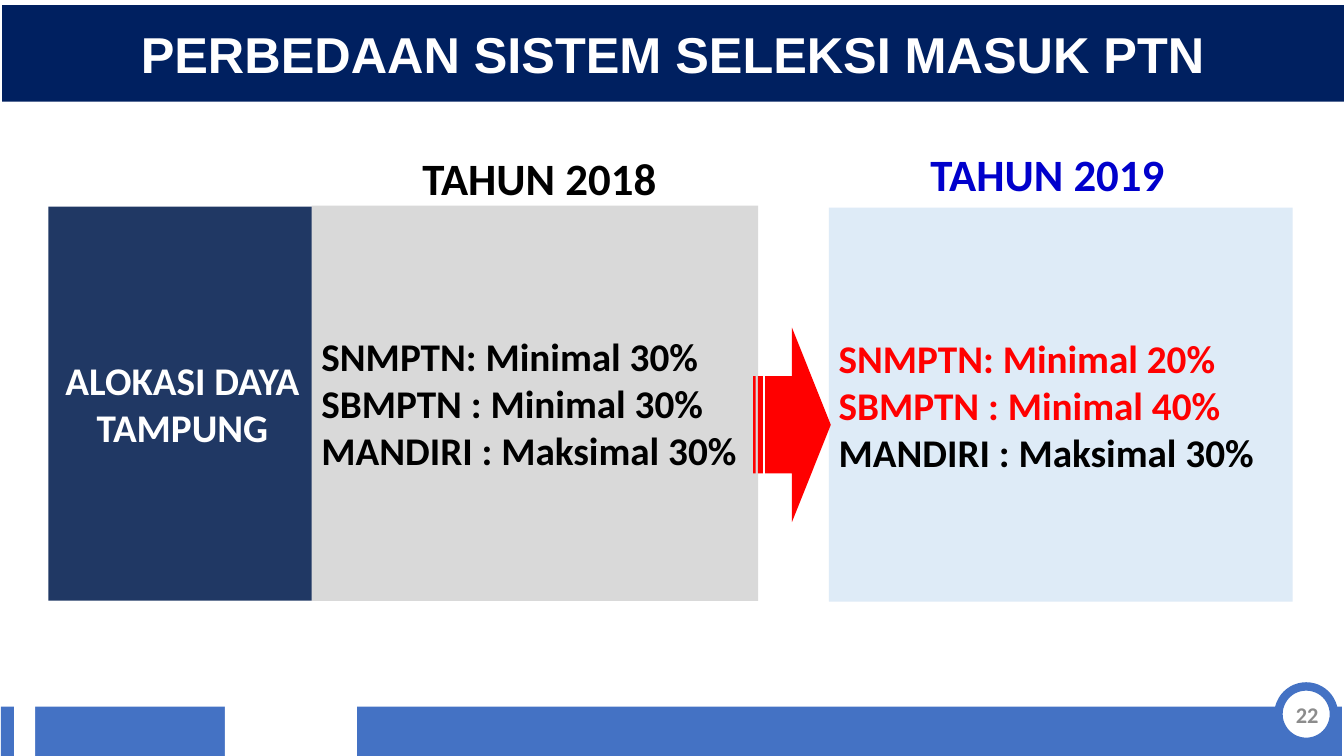
"""Build the slide comparing the 2018 and 2019 admission quotas."""
from pptx import Presentation
from pptx.dml.color import RGBColor
from pptx.enum.shapes import MSO_SHAPE
from pptx.enum.text import MSO_ANCHOR, PP_ALIGN
from pptx.util import Inches, Pt

WHITE = RGBColor(255, 255, 255)
BLACK = RGBColor(0, 0, 0)
RED = RGBColor(255, 0, 0)
BLUE = RGBColor(0x44, 0x72, 0xC4)
NAVY = RGBColor(0, 0x20, 0x60)
SLATE = RGBColor(0x20, 0x38, 0x64)
SILVER = RGBColor(0xD9, 0xD9, 0xD9)
PALE = RGBColor(0xDE, 0xEB, 0xF7)
ROYAL = RGBColor(0, 0, 0xCC)
GRAY = RGBColor(0x8C, 0x8C, 0x8C)

CELL = Inches(0.1)
COLS, ROWS = 133.3, 75
LEFT, RIGHT = PP_ALIGN.LEFT, 133.1
MID = PP_ALIGN.CENTER
RECT = MSO_SHAPE.RECTANGLE

FOOTER = [
    (RECT, (0.1, 70.1, RIGHT - 0.1, ROWS - 70.1), BLUE),
    (RECT, (1.4, 68.1, 2.1, ROWS - 68.1), WHITE),
    (RECT, (22.3, 69.1, 13.1, ROWS - 69.1), WHITE),
]
BADGE = (126.8, 68.1, 5.5, 5.5)
PAGE = ("22", (126.4, 68.4, 6.5, 4.9), 16, GRAY)
PANELS = [
    ((4.8, 20.5, 26.6, 39.1), SLATE, MID, [("ALOKASI DAYA TAMPUNG", WHITE)]),
    ((30.9, 20.4, 44.3, 39.2), SILVER, LEFT, [
        ("SNMPTN: Minimal 30%", BLACK),
        ("SBMPTN : Minimal 30%", BLACK),
        ("MANDIRI : Maksimal 30%", BLACK),
    ]),
    ((82.2, 20.6, 46, 39.1), PALE, LEFT, [
        ("SNMPTN: Minimal 20%", RED),
        ("SBMPTN : Minimal 40%", RED),
        ("MANDIRI : Maksimal 30%", BLACK),
    ]),
]
YEARS = [
    ("TAHUN 2018", (38.4, 14.6, 30.2, 6.1), 32, BLACK),
    ("TAHUN 2019", (91.4, 14.2, 25, 6.1), 32, ROYAL),
]
ARROW = (74.7, 32.5, 7.7, 19.3)
TITLE = ("PERBEDAAN SISTEM SELEKSI MASUK PTN", (0.2, 0.5, COLS - 0.2, 9.6))


def place(box):
    return [round(n * CELL) for n in box]


def draw(slide, kind, box, fill):
    shape = slide.shapes.add_shape(kind, *place(box))
    shape.shadow.inherit = False
    shape.fill.solid()
    shape.fill.fore_color.rgb = fill
    shape.line.fill.background()
    return shape


def write(shape, lines, size, align, face="Calibri"):
    frame = shape.text_frame
    frame.word_wrap = True
    frame.vertical_anchor = MSO_ANCHOR.MIDDLE
    for i, (text, ink) in enumerate(lines):
        para = frame.add_paragraph() if i else frame.paragraphs[0]
        para.alignment = align
        run = para.add_run()
        run.text = text
        run.font.name = face
        run.font.size = Pt(size)
        run.font.bold = True
        run.font.color.rgb = ink
    return frame


def label(slide, text, box, size, ink):
    shape = slide.shapes.add_textbox(*place(box))
    return write(shape, [(text, ink)], size, MID)


def main():
    deck = Presentation()
    deck.slide_width, deck.slide_height = place((COLS, ROWS))
    slide = deck.slides.add_slide(deck.slide_layouts[6])
    for part in FOOTER:
        draw(slide, *part)
    ring = draw(slide, MSO_SHAPE.FLOWCHART_CONNECTOR, BADGE, WHITE)
    ring.line.color.rgb = BLUE
    ring.line.width = Pt(6)
    label(slide, *PAGE)
    for box, fill, align, lines in PANELS:
        write(draw(slide, RECT, box, fill), lines, 28, align)
    for year in YEARS:
        frame = label(slide, *year)
        frame.margin_left = frame.margin_right = Inches(0.07)
        frame.margin_top = frame.margin_bottom = Inches(0.04)
    draw(slide, MSO_SHAPE.STRIPED_RIGHT_ARROW, ARROW, RED)
    text, box = TITLE
    write(draw(slide, RECT, box, NAVY), [(text, WHITE)], 36, MID, "Arial")
    deck.save("out.pptx")


if __name__ == "__main__":
    main()
